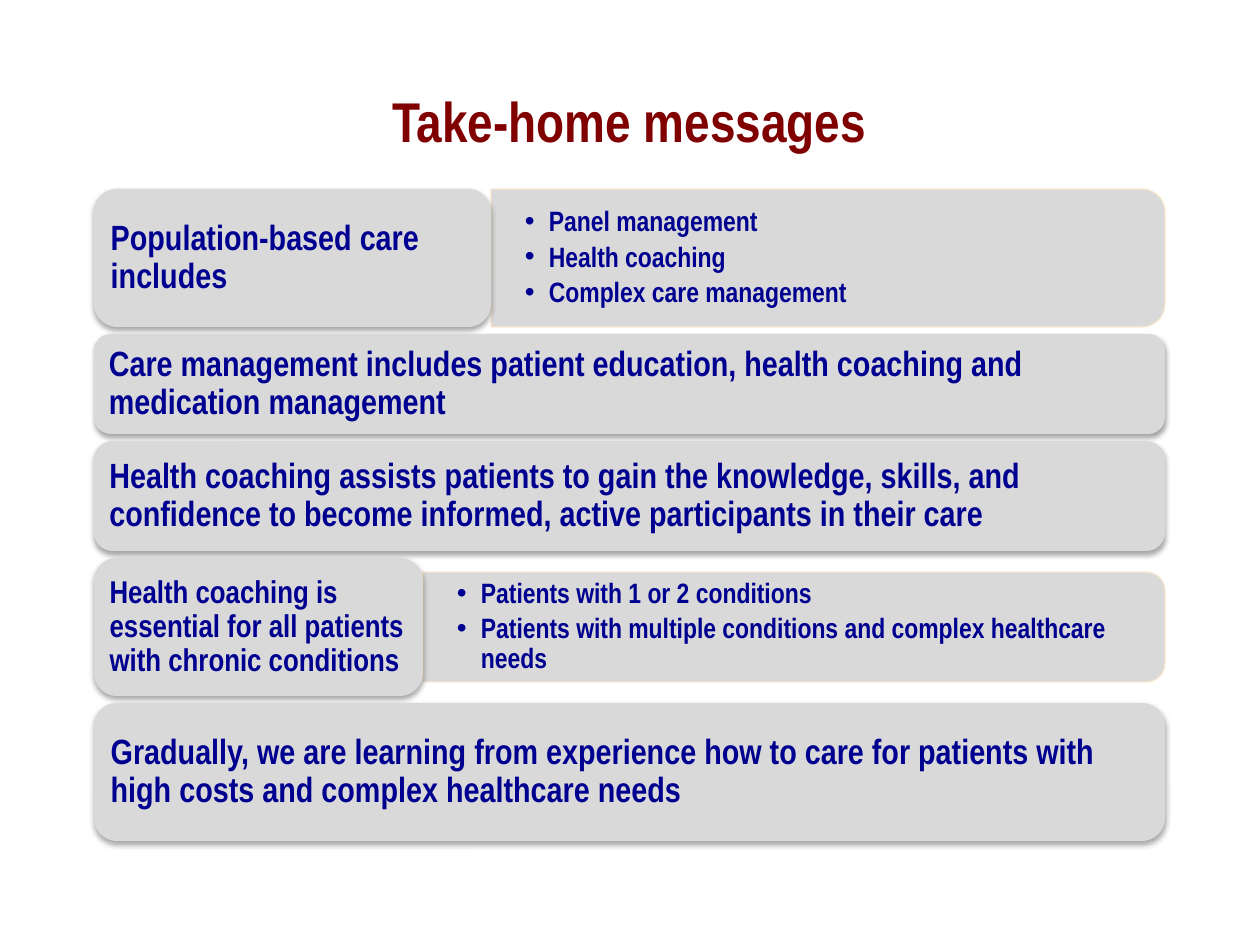
import pptx
import pptx.dml.color
import pptx.enum.shapes
import pptx.enum.text
import pptx.oxml.ns
import pptx.util
from lxml import etree

theme = {
    "font": "Arial Narrow",
    "title": "800000",
    "text": "000090",
    "card": "D9D9D9",
    "edge": "FDE8CD",
    "shade": "000000",
    "head": 32,
    "large": 20,
    "mid": 18,
    "small": 16,
}
SCALE = 914400 / 126
LEFT, TOP, WIDTH, GAP = 94, 189, 1071, 7
kinds = pptx.enum.shapes.MSO_SHAPE
aligns = pptx.enum.text.PP_ALIGN
qn = pptx.oxml.ns.qn
rgb = pptx.dml.color.RGBColor.from_string


def px(*sizes):
    return [pptx.util.Emu(round(size * SCALE)) for size in sizes]


def write(shape, lines, size, color="text", align=aligns.LEFT, pad=(0, 0), space=0.9, bullet=False):
    frame = shape.text_frame
    frame.word_wrap = True
    frame.vertical_anchor = pptx.enum.text.MSO_ANCHOR.MIDDLE
    side, edge = px(*pad)
    frame.margin_left = frame.margin_right = side
    frame.margin_top = frame.margin_bottom = edge
    for num, line in enumerate(lines):
        para = frame.add_paragraph() if num else frame.paragraphs[0]
        para.alignment = align
        para.line_spacing = space
        run = para.add_run()
        run.text = line
        run.font.name = theme["font"]
        run.font.size = pptx.util.Pt(theme[size])
        run.font.bold = True
        run.font.color.rgb = rgb(theme[color])
        if bullet:
            para.space_after = pptx.util.Pt(3)
            props = para._p.get_or_add_pPr()
            dent = px(24)[0]
            props.set("marL", str(dent))
            props.set("indent", str(-dent))
            etree.SubElement(props, qn("a:buFont"), typeface="Arial")
            etree.SubElement(props, qn("a:buChar"), char="•")


deck = pptx.Presentation()
deck.slide_width, deck.slide_height = px(1260, 945)
slide = deck.slides.add_slide(deck.slide_layouts[6])
shapes = slide.shapes

title = shapes.add_textbox(*px(LEFT, 84, WIDTH, 73))
write(title, ["Take-home messages"], "head", color="title", align=aligns.CENTER, space=1)

rows = [
    ("Population-based care includes", 397, 138, "large", 138,
     ["Panel management", "Health coaching", "Complex care management"]),
    ("Care management includes patient education, health coaching and medication management",
     WIDTH, 100, "large", 0, []),
    ("Health coaching assists patients to gain the knowledge, skills, and confidence "
     "to become informed, active participants in their care",
     WIDTH, 110, "large", 0, []),
    ("Health coaching is essential for all patients with chronic conditions", 329, 138, "mid", 110,
     ["Patients with 1 or 2 conditions",
      "Patients with multiple conditions and complex healthcare needs"]),
    ("Gradually, we are learning from experience how to care for patients with "
     "high costs and complex healthcare needs",
     WIDTH, 138, "large", 0, []),
]

top = TOP
for text, wide, high, size, tall, points in rows:
    if points:
        start, span = LEFT + wide, WIDTH - wide
        mid_x, mid_y = start + span / 2, top + high / 2
        panel = shapes.add_shape(
            kinds.ROUND_2_SAME_RECTANGLE,
            *px(mid_x - tall / 2, mid_y - span / 2, tall, span))
        panel.rotation = 90
        panel.shadow.inherit = False
        panel.fill.solid()
        panel.fill.fore_color.rgb = rgb(theme["card"])
        panel.line.color.rgb = rgb(theme["edge"])
        panel.line.width = pptx.util.Pt(0.75)
        tint = panel.line._ln.find(".//" + qn("a:srgbClr"))
        etree.SubElement(tint, qn("a:alpha"), val="90000")
        note = shapes.add_textbox(*px(start, mid_y - tall / 2 + 6, span - 6, tall - 12))
        write(note, points, "small", pad=(34, 18), bullet=True)

    card = shapes.add_shape(kinds.ROUNDED_RECTANGLE, *px(LEFT, top, wide, high))
    card.fill.solid()
    card.fill.fore_color.rgb = rgb(theme["card"])
    card.line.fill.background()
    card.shadow.inherit = False
    glow = etree.SubElement(
        card._element.spPr.find(qn("a:effectLst")), qn("a:outerShdw"),
        blurRad=str(pptx.util.Pt(3.1)), dist=str(pptx.util.Pt(1.8)),
        dir="5400000", rotWithShape="0")
    shade = etree.SubElement(glow, qn("a:srgbClr"), val=theme["shade"])
    etree.SubElement(shade, qn("a:alpha"), val="35000")
    write(card, [text], size, pad=(10 if size == "large" else 9, 5))
    top += high + GAP

deck.save("out.pptx")
